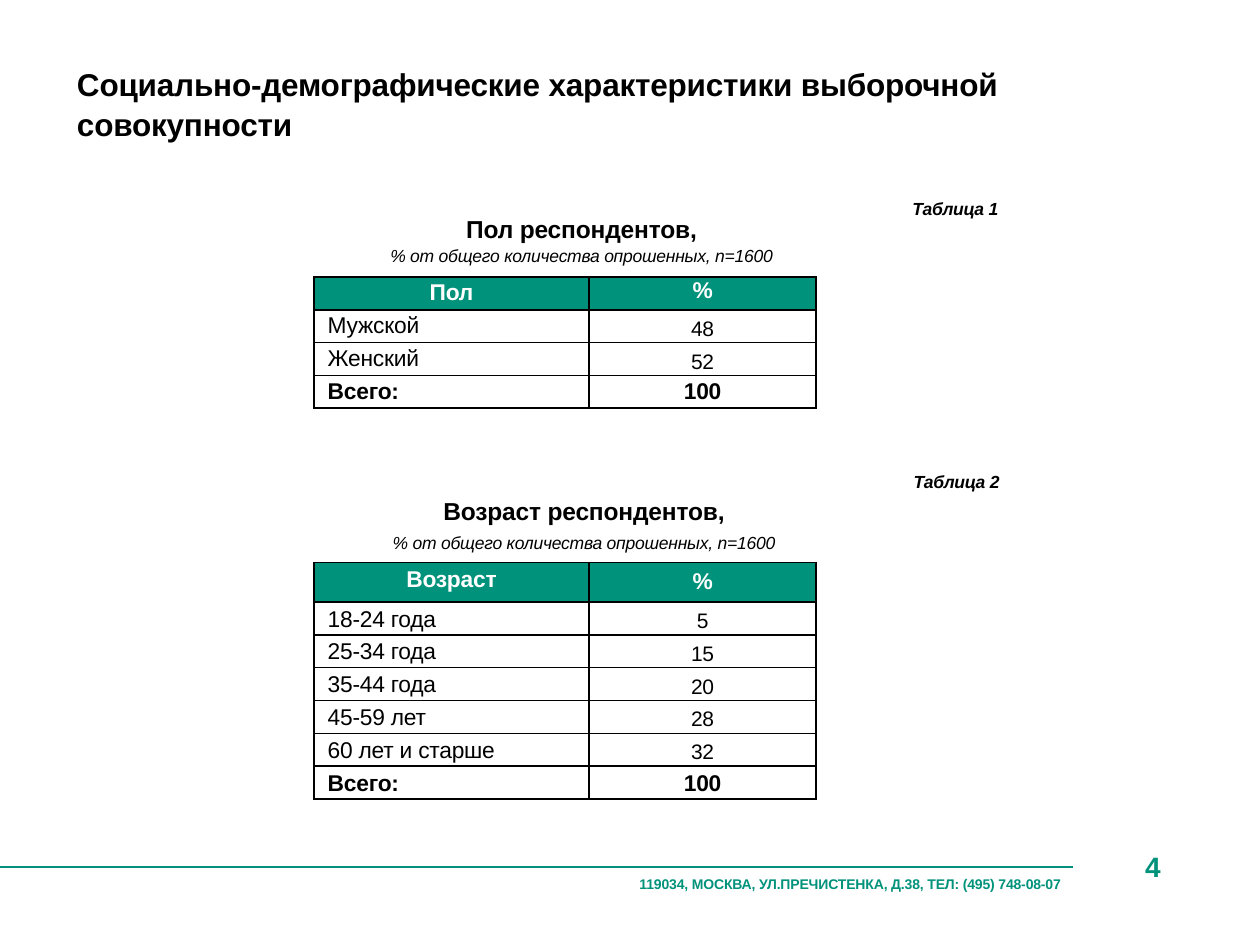
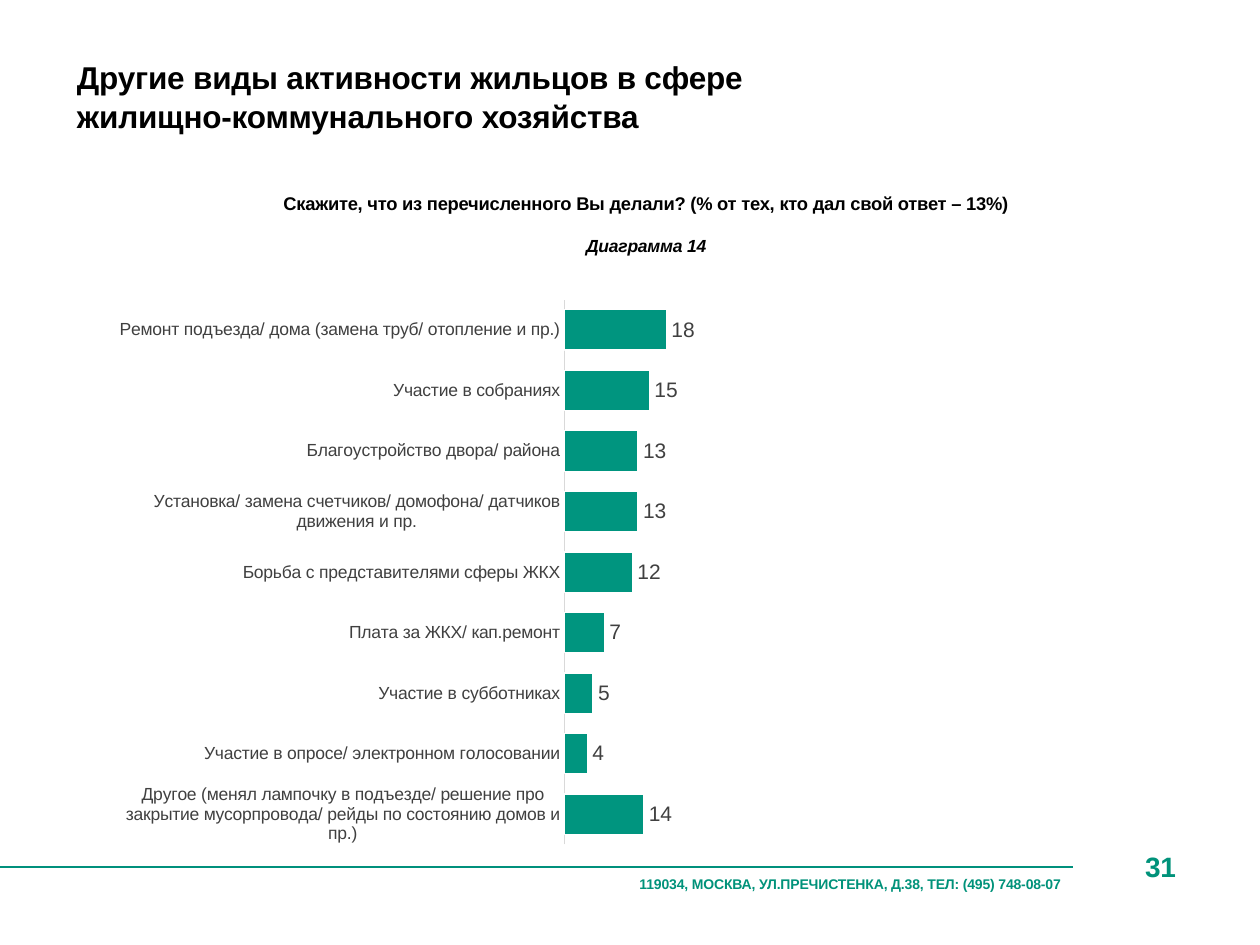
"""Build two survey report slides: sample tables and an activity chart."""
from lxml import etree
from pptx import Presentation
from pptx.chart.data import CategoryChartData
from pptx.dml.color import RGBColor
from pptx.enum.chart import XL_CHART_TYPE, XL_LABEL_POSITION, XL_TICK_MARK
from pptx.enum.shapes import MSO_CONNECTOR
from pptx.enum.text import MSO_ANCHOR, PP_ALIGN
from pptx.oxml.ns import qn
from pptx.util import Pt

LEFT, CENTER = PP_ALIGN.LEFT, PP_ALIGN.CENTER
TOP = MSO_ANCHOR.TOP
STRAIGHT = MSO_CONNECTOR.STRAIGHT
BAR_CLUSTERED = XL_CHART_TYPE.BAR_CLUSTERED
OUTSIDE_END = XL_LABEL_POSITION.OUTSIDE_END
NO_TICKS = XL_TICK_MARK.NONE

GREEN = RGBColor(0x00, 0x92, 0x7A)
LINE_GREEN = RGBColor(0x00, 0x90, 0x7C)
BAR_GREEN = RGBColor(0x00, 0x95, 0x7F)
BLACK = RGBColor(0x00, 0x00, 0x00)
WHITE = RGBColor(0xFF, 0xFF, 0xFF)
DARK_GRAY = RGBColor(0x40, 0x40, 0x40)
LIGHT_GRAY = RGBColor(0xD9, 0xD9, 0xD9)

FONT = "Arial"
ADDRESS = "119034, МОСКВА, УЛ.ПРЕЧИСТЕНКА, Д.38, ТЕЛ: (495) 748-08-07"
SAMPLE_NOTE = "% от общего количества опрошенных, n=1600"
TITLE_LINE_SPACING = 1.05

GENDER_ROWS = [("Пол", "%"), ("Мужской", "48"), ("Женский", "52"), ("Всего:", "100")]
AGE_ROWS = [
    ("Возраст", "%"),
    ("18-24 года", "5"),
    ("25-34 года", "15"),
    ("35-44 года", "20"),
    ("45-59 лет", "28"),
    ("60 лет и старше", "32"),
    ("Всего:", "100"),
]
ACTIVITIES = {
    "Ремонт подъезда/ дома (замена труб/ отопление и пр.)": 18,
    "Участие в собраниях": 15,
    "Благоустройство двора/ района": 13,
    "Установка/ замена счетчиков/ домофона/ датчиков движения и пр.": 13,
    "Борьба с представителями сферы ЖКХ": 12,
    "Плата за ЖКХ/ кап.ремонт": 7,
    "Участие в субботниках": 5,
    "Участие в опросе/ электронном голосовании": 4,
    "Другое (менял лампочку в подъезде/ решение про закрытие мусорпровода/ "
    "рейды по состоянию домов и пр.)": 14,
}


def style_font(font, size, color, bold=False, italic=False):
    """Apply the shared typeface with the given size, colour and weight."""
    font.name = FONT
    font.size = Pt(size)
    font.color.rgb = color
    font.bold = bold
    font.italic = italic


def write_run(paragraph, text, size, color=BLACK, bold=False, italic=False):
    """Add one slightly condensed run."""
    run = paragraph.add_run()
    run.text = text
    style_font(run.font, size, color, bold, italic)
    run._r.get_or_add_rPr().set("spc", "-10")


def prepare_frame(frame, inset):
    """Wrap text from the top edge, with only a top inset."""
    frame.word_wrap = True
    frame.vertical_anchor = TOP
    frame.margin_left = frame.margin_right = frame.margin_bottom = 0
    frame.margin_top = Pt(inset)


def next_paragraph(frame, index):
    """Return the first paragraph of a frame or append another."""
    return frame.add_paragraph() if index else frame.paragraphs[0]


def add_title(slide, lines, top, width):
    """Fill and place the title placeholder."""
    title = slide.shapes.title
    title.left, title.top, title.width, title.height = Pt(44), Pt(top), Pt(width), Pt(45)
    prepare_frame(title.text_frame, 1.7)
    for index, line in enumerate(lines):
        paragraph = next_paragraph(title.text_frame, index)
        paragraph.alignment = LEFT
        paragraph.line_spacing = TITLE_LINE_SPACING
        paragraph.space_before = Pt(0)
        write_run(paragraph, line, 18, bold=True)


def add_text(slide, box, lines, inset=0, alignment=LEFT, gap=0, line_spacing=None):
    """Add a text box of (text, size, colour, bold, italic) lines."""
    frame = slide.shapes.add_textbox(*map(Pt, box)).text_frame
    prepare_frame(frame, inset)
    for index, line in enumerate(lines):
        paragraph = next_paragraph(frame, index)
        paragraph.alignment = alignment
        if index:
            paragraph.space_before = Pt(gap)
        if line_spacing:
            paragraph.line_spacing = Pt(line_spacing)
        write_run(paragraph, *line)


def add_footer(slide, number):
    """Add the green rule, the address and the slide number."""
    rule = slide.shapes.add_connector(STRAIGHT, 0, Pt(495.3), Pt(613.3), Pt(495.3))
    rule.line.color.rgb = LINE_GREEN
    rule.line.width = Pt(1.2)
    etree.SubElement(rule._element.spPr, qn("a:effectLst"))
    add_text(slide, (365.4, 500.4, 250, 11), [(ADDRESS, 8, GREEN, True)])
    add_text(slide, (654.3, 486, 24, 20), [(number, 16, GREEN, True)], line_spacing=18.6)


def add_table_heading(slide, box, heading, inset, gap):
    """Add a centred table heading with the sample note below it."""
    lines = [(heading, 14, BLACK, True), (SAMPLE_NOTE, 10, BLACK, False, True)]
    add_text(slide, box, lines, inset, CENTER, gap)


def add_caption(slide, text, left, top):
    """Add the italic table number."""
    add_text(slide, (left, top, 54, 14), [(text, 10, BLACK, True, True)], 1.6)


def set_borders(cell):
    """Draw a thin black line on every side of a cell."""
    properties = cell._tc.get_or_add_tcPr()
    for side in ("a:lnL", "a:lnR", "a:lnT", "a:lnB"):
        line = etree.SubElement(properties, qn(side), w=str(Pt(1)))
        fill = etree.SubElement(line, qn("a:solidFill"))
        etree.SubElement(fill, qn("a:srgbClr"), val=str(BLACK))


def fill_cell(cell, text, inset, size, alignment, header, bold):
    """Format and fill one table cell."""
    set_borders(cell)
    if header:
        cell.fill.solid()
        cell.fill.fore_color.rgb = GREEN
    else:
        cell.fill.background()
    cell.margin_left = Pt(8 if alignment == LEFT else 0)
    cell.margin_right = cell.margin_bottom = 0
    cell.margin_top = Pt(inset)
    cell.vertical_anchor = TOP
    paragraph = cell.text_frame.paragraphs[0]
    paragraph.alignment = alignment
    write_run(paragraph, text, size, WHITE if header else BLACK, bold)


def add_share_table(slide, top, rows, header_height, label_inset, percent_inset):
    """Add a two-column table with a green header and a bold total row."""
    row_height = 18.75
    height = header_height + row_height * (len(rows) - 1)
    frame = slide.shapes.add_table(len(rows), 2, Pt(179.3), Pt(top), Pt(287), Pt(height))
    table = frame.table
    table.first_row = table.horz_banding = False
    table.columns[0].width, table.columns[1].width = Pt(157.4), Pt(129.6)
    for index, (label, share) in enumerate(rows):
        header, total = index == 0, index == len(rows) - 1
        strong = header or total
        table.rows[index].height = Pt(header_height if header else row_height)
        fill_cell(table.cell(index, 0), label, label_inset, 13,
                  CENTER if header else LEFT, header, strong)
        share_inset = percent_inset if header else label_inset if total else 4.2
        fill_cell(table.cell(index, 1), share, share_inset, 13 if strong else 12,
                  CENTER, header, strong)


def set_plot_layout(chart, x, y, w, h):
    """Fix the inner plot area as fractions of the chart."""
    plot_area = chart._chartSpace.chart.plotArea
    for layout in plot_area.findall(qn("c:layout")):
        plot_area.remove(layout)
    layout = etree.Element(qn("c:layout"))
    plot_area.insert(0, layout)
    manual = etree.SubElement(layout, qn("c:manualLayout"))
    settings = {"layoutTarget": "inner", "xMode": "edge", "yMode": "edge",
                "x": x, "y": y, "w": w, "h": h}
    for name, value in settings.items():
        etree.SubElement(manual, qn(f"c:{name}"), val=str(value))


def add_activity_chart(slide):
    """Add the bar chart of resident activities."""
    data = CategoryChartData(number_format="0")
    data.categories = list(ACTIVITIES)
    data.add_series("Series 1", list(ACTIVITIES.values()))
    chart = slide.shapes.add_chart(
        BAR_CLUSTERED, Pt(59.8), Pt(164.9), Pt(597.6), Pt(321), data).chart
    chart.has_title = chart.has_legend = False
    style_font(chart.font, 10, BLACK)
    set_plot_layout(chart, 0.44, 0.02, 0.54, 0.97)

    categories = chart.category_axis
    categories.reverse_order = True
    categories.major_tick_mark = categories.minor_tick_mark = NO_TICKS
    categories.format.line.color.rgb = LIGHT_GRAY
    categories.format.line.width = Pt(0.75)
    style_font(categories.tick_labels.font, 10, DARK_GRAY)
    values = chart.value_axis
    values.minimum_scale, values.maximum_scale = 0, 100
    values.has_major_gridlines = False
    values.visible = False

    plot = chart.plots[0]
    plot.gap_width = 50
    plot.vary_by_categories = False
    series = plot.series[0]
    series.format.fill.solid()
    series.format.fill.fore_color.rgb = BAR_GREEN
    series.format.line.color.rgb = WHITE
    series.format.line.width = Pt(0.75)
    labels = series.data_labels
    labels.show_value = True
    labels.position = OUTSIDE_END
    labels.number_format = "0"
    labels.number_format_is_linked = False
    style_font(labels.font, 12, DARK_GRAY)


def build_sample_slide(slide):
    """Fill the slide with the gender and age tables."""
    add_title(slide, ["Социально-демографические характеристики выборочной",
                      "совокупности"], 34.6, 540)
    add_footer(slide, "4")
    add_share_table(slide, 158.3, GENDER_ROWS, 18.75, 1.8, 0.3)
    add_table_heading(slide, (219.6, 118, 225.4, 32.4), "Пол респондентов,", 4.3, 0.8)
    add_caption(slide, "Таблица 1", 521.3, 111.6)
    add_table_heading(slide, (221, 270.7, 225.4, 39.6), "Возраст респондентов,", 12.7, 3.6)
    add_caption(slide, "Таблица 2", 522, 267.8)
    add_share_table(slide, 321.3, AGE_ROWS, 22.8, 2.5, 4)


def build_activity_slide(slide):
    """Fill the slide with the activity question and chart."""
    add_title(slide, ["Другие виды активности жильцов в сфере "
                      "жилищно-коммунального хозяйства"], 30.2, 433)
    question = "Скажите, что из перечисленного Вы делали? (% от тех, кто дал свой ответ – 13%)"
    add_text(slide, (51, 108, 636.5, 39),
             [(question, 10.5, BLACK, True), ("Диаграмма 14", 10, BLACK, True, True)],
             1.8, CENTER, 12.2)
    add_footer(slide, "31")
    add_activity_chart(slide)


def main():
    """Create and save the presentation."""
    presentation = Presentation()
    presentation.slide_width, presentation.slide_height = Pt(720), Pt(540)
    title_only = presentation.slide_layouts[5]
    for build in (build_sample_slide, build_activity_slide):
        build(presentation.slides.add_slide(title_only))
    presentation.save("out.pptx")


if __name__ == "__main__":
    main()
